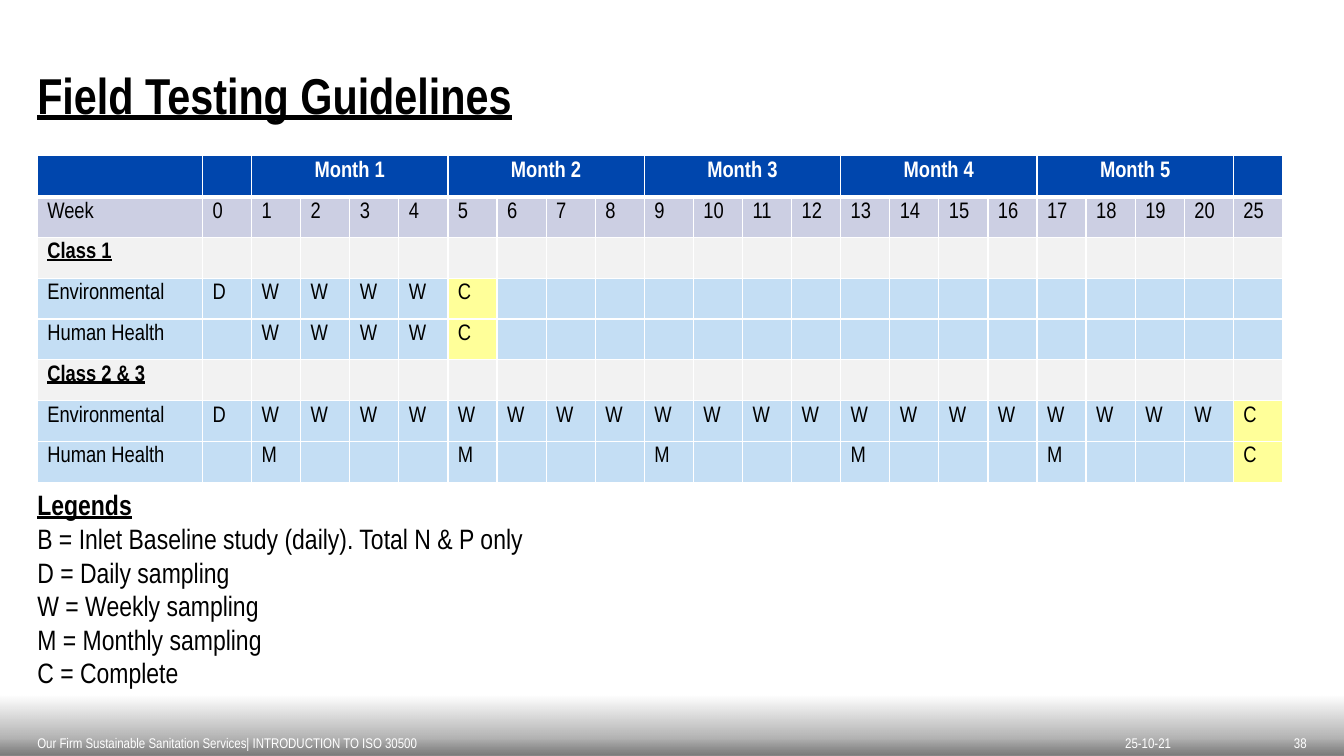
"""Build the field testing guidelines slide with its sampling schedule."""
from lxml import etree
from pptx import Presentation
from pptx.dml.color import RGBColor
from pptx.enum.shapes import MSO_SHAPE as Shape
from pptx.enum.text import MSO_ANCHOR as Anchor, PP_ALIGN as Align
from pptx.oxml import parse_xml
from pptx.oxml.ns import nsdecls, qn
from pptx.util import Pt

TITLE = "Field Testing Guidelines"
MONTHS = ["Month 1", "Month 2", "Month 3", "Month 4", "Month 5"]
WEEKS = [*range(21), 25]
SCHEDULE = [
    ("week", "Week", [str(week) for week in WEEKS]),
    ("class", "Class 1", []),
    ("sampling", "Environmental", ["D", *"WWWW", "C"]),
    ("sampling", "Human Health", ["", *"WWWW", "C"]),
    ("class", "Class 2 & 3", []),
    ("sampling", "Environmental", ["D", *"W" * 20, "C"]),
    ("sampling", "Human Health", ["", *["M", "", "", ""] * 5, "C"]),
]
LEGEND_HEADING = "Legends"
LEGENDS = [
    "B = Inlet Baseline study (daily). Total N & P only",
    "D = Daily sampling",
    "W = Weekly sampling",
    "M = Monthly sampling",
    "C = Complete",
]
FOOTER = "Our Firm Sustainable Sanitation Services| INTRODUCTION TO ISO 30500"
DATE = "25-10-21"
PAGE = "38"

FONT = "Arial Narrow"
BLACK = RGBColor(0, 0, 0)
WHITE = RGBColor(255, 255, 255)
HEADER_BLUE = RGBColor(0x00, 0x46, 0xAD)
COMPLETE_YELLOW = RGBColor(0xFF, 0xFF, 0x99)
ROW_FILLS = {
    "week": RGBColor(0xCC, 0xCF, 0xE3),
    "class": RGBColor(0xF2, 0xF2, 0xF2),
    "sampling": RGBColor(0xC4, 0xDE, 0xF4),
}
BAND_STOPS = [(0, "212121", 60), (29, "000000", 30), (100, "000000", 0)]

SLIDE_W, SLIDE_H = 960, 540
MARGIN = 26.64
TABLE_TOP, TABLE_W, TABLE_H = 111.3, 890, 233.3
LABEL_W = 118
WEEKS_PER_MONTH = 4
BAND_TOP = 496.8
FOOTER_TOP, FOOTER_H = 519.84, 20.16


def write(frame, *lines, size, color=BLACK, bold=False, underline=False,
          align=Align.LEFT, after=0, append=False):
    for number, line in enumerate(lines):
        fresh = append or number > 0
        paragraph = frame.add_paragraph() if fresh else frame.paragraphs[0]
        paragraph.alignment = align
        paragraph.space_after = Pt(after)
        font = paragraph.font
        if line:
            run = paragraph.add_run()
            run.text = line
            font = run.font
        font.name, font.size, font.bold = FONT, Pt(size), bold
        font.underline = underline
        font.color.rgb = color


def set_frame(frame, anchor=Anchor.TOP, insets=(0, 0, 0, 0)):
    frame.word_wrap = True
    frame.vertical_anchor = anchor
    (frame.margin_left, frame.margin_top,
     frame.margin_right, frame.margin_bottom) = map(Pt, insets)
    return frame


def add_frame(slide, left, top, width, height, **layout):
    box = slide.shapes.add_textbox(Pt(left), Pt(top), Pt(width), Pt(height))
    return set_frame(box.text_frame, **layout)


def style_cell(cell, fill, top=1, bottom=1):
    properties = cell._tc.get_or_add_tcPr()
    for side, width in (("L", 1), ("R", 1), ("T", top), ("B", bottom)):
        border = etree.SubElement(properties, qn(f"a:ln{side}"), w=str(Pt(width)))
        solid = etree.SubElement(border, qn("a:solidFill"))
        etree.SubElement(solid, qn("a:srgbClr"), val=str(WHITE))
    cell.fill.solid()
    cell.fill.fore_color.rgb = fill


def add_schedule(slide):
    rows, columns = len(SCHEDULE) + 1, len(WEEKS) + 1
    table = slide.shapes.add_table(rows, columns, Pt(MARGIN), Pt(TABLE_TOP),
                                   Pt(TABLE_W), Pt(TABLE_H)).table
    week_w = (TABLE_W - LABEL_W) / len(WEEKS)
    for index, column in enumerate(table.columns):
        column.width = Pt(week_w if index else LABEL_W)
    for row in table.rows:
        row.height = Pt(TABLE_H / rows)

    for index in range(columns):
        style_cell(table.cell(0, index), HEADER_BLUE, bottom=3)
    for index, month in enumerate(MONTHS):
        first = 2 + index * WEEKS_PER_MONTH
        head = table.cell(0, first)
        head.merge(table.cell(0, first + WEEKS_PER_MONTH - 1))
        write(head.text_frame, month, size=16, color=WHITE, bold=True,
              align=Align.CENTER)

    for number, (kind, label, marks) in enumerate(SCHEDULE, 1):
        heading = kind == "class"
        entries = [label, *marks] + [""] * (len(WEEKS) - len(marks))
        for index, entry in enumerate(entries):
            cell = table.cell(number, index)
            fill = COMPLETE_YELLOW if entry == "C" else ROW_FILLS[kind]
            style_cell(cell, fill, top=3 if number == 1 else 1)
            write(cell.text_frame, entry, size=16, bold=heading, underline=heading)


def add_footer(slide):
    band = slide.shapes.add_shape(Shape.RECTANGLE, Pt(0), Pt(BAND_TOP),
                                  Pt(SLIDE_W), Pt(SLIDE_H - BAND_TOP))
    band.shadow.inherit = False
    band.line.fill.background()
    stops = "".join(
        f'<a:gs pos="{place * 1000}"><a:srgbClr val="{color}">'
        f'<a:alpha val="{opacity * 1000}"/></a:srgbClr></a:gs>'
        for place, color, opacity in BAND_STOPS)
    gradient = parse_xml(
        f'<a:gradFill {nsdecls("a")} rotWithShape="1"><a:gsLst>{stops}</a:gsLst>'
        '<a:lin ang="16200000" scaled="0"/></a:gradFill>')
    band._element.spPr.find(qn("a:prstGeom")).addnext(gradient)
    page = set_frame(band.text_frame, Anchor.BOTTOM, (MARGIN, 3.6, MARGIN, 3.6))
    write(page, PAGE, size=10, color=WHITE, align=Align.RIGHT, after=6)

    date = add_frame(slide, 763.2, FOOTER_TOP, 113.76, FOOTER_H,
                     anchor=Anchor.BOTTOM, insets=(7.2, 3.6, 7.2, 3.6))
    write(date, DATE, size=10, color=WHITE, align=Align.CENTER)
    footer = add_frame(slide, 0, FOOTER_TOP, 684, FOOTER_H,
                       anchor=Anchor.BOTTOM, insets=(MARGIN, 3.6, 0, 3.6))
    write(footer, FOOTER, size=10, color=WHITE)


def main():
    deck = Presentation()
    deck.slide_width, deck.slide_height = Pt(SLIDE_W), Pt(SLIDE_H)
    slide = deck.slides.add_slide(deck.slide_layouts[6])
    add_schedule(slide)
    title = add_frame(slide, MARGIN, 46.08, 907.2, 43.92)
    write(title, TITLE, size=36, bold=True, underline=True)
    add_footer(slide)
    legend = add_frame(slide, MARGIN, 348.48, 583.92, 169.92)
    write(legend, LEGEND_HEADING, size=20, bold=True, underline=True)
    write(legend, *LEGENDS, size=20, append=True)
    deck.save("out.pptx")


if __name__ == "__main__":
    main()
